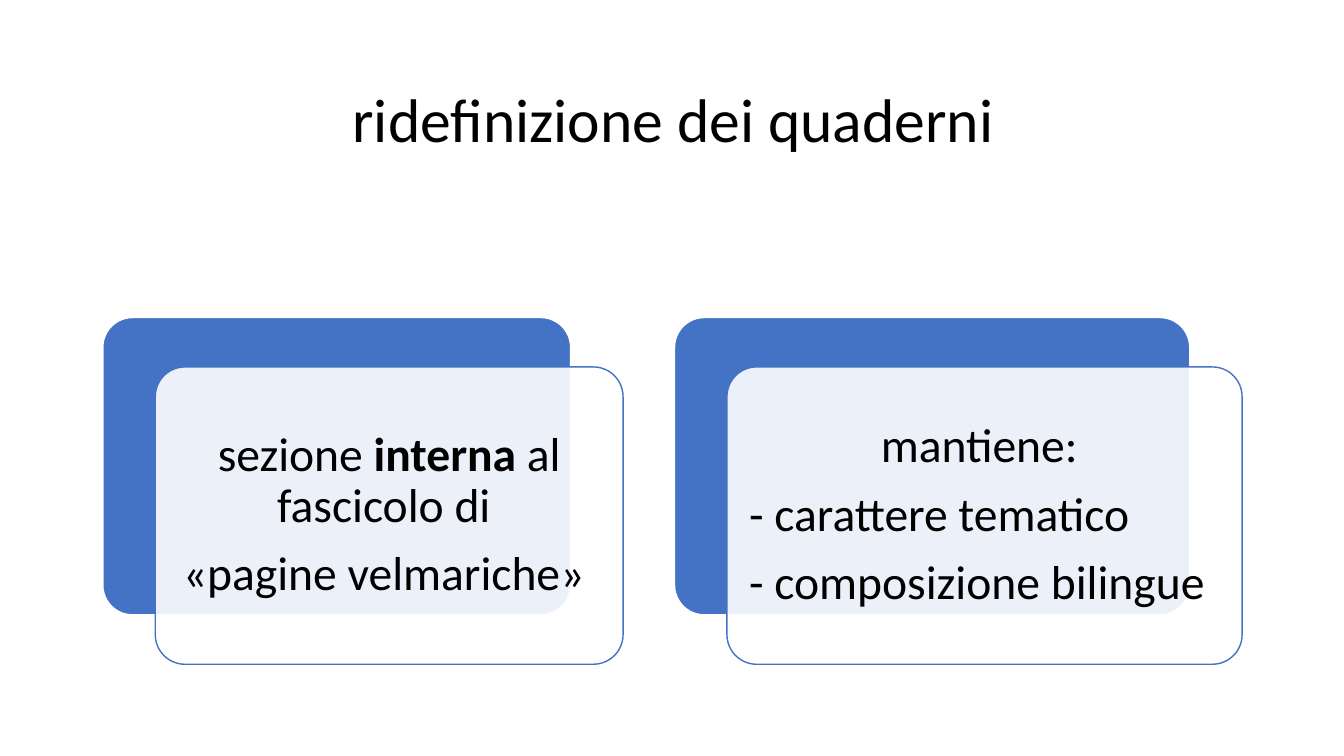
from dataclasses import dataclass

from lxml import etree
from pptx import Presentation
from pptx import util as u
from pptx.dml.color import RGBColor
from pptx.enum import shapes, text
from pptx.oxml.ns import qn
from pptx.slide import Slide
from pptx.text.text import TextFrame

COLORS = {"ink": "000000", "blue": "4472C4", "white": "FFFFFF"}
FONT = "Calibri"
CENTER, LEFT = text.PP_ALIGN.CENTER, text.PP_ALIGN.LEFT

CARD_TOP, CARD_HEIGHT = 3.15, 2.95
PANEL_SHIFT_X, PANEL_SHIFT_Y = 0.52, 0.49
TEXT_INSET, TEXT_MARGIN = 0.08, 0.14


@dataclass
class Run:
    words: str
    bold: bool = False


@dataclass
class Line:
    runs: list[Run]
    align: text.PP_ALIGN = CENTER


@dataclass
class Card:
    left: float
    width: float
    lines: list[Line]


TITLE = [Line([Run("ridefinizione dei quaderni")])]
CARDS = [
    Card(1.02, 4.64, [
        Line([Run("sezione "), Run("interna", bold=True), Run(" al fascicolo di ")]),
        Line([Run("«pagine velmariche» ")]),
    ]),
    Card(6.69, 5.11, [
        Line([Run("mantiene: ")]),
        Line([Run("- carattere tematico")], LEFT),
        Line([Run("- composizione bilingue")], LEFT),
    ]),
]


def rgb(name: str) -> RGBColor:
    return RGBColor.from_string(COLORS[name])


def write(frame: TextFrame, lines: list[Line], *, size: float,
          space_after: float = 0, color: str = "ink") -> None:
    frame.word_wrap = True
    frame.auto_size = text.MSO_AUTO_SIZE.NONE
    frame.vertical_anchor = text.MSO_ANCHOR.MIDDLE
    for index, line in enumerate(lines):
        paragraph = frame.add_paragraph() if index else frame.paragraphs[0]
        paragraph.alignment = line.align
        paragraph.line_spacing = 0.9
        paragraph.space_after = u.Pt(space_after)
        for part in line.runs:
            run = paragraph.add_run()
            run.text = part.words
            run.font.name = FONT
            run.font.size = u.Pt(size)
            run.font.bold = part.bold
            run.font.color.rgb = rgb(color)


def add_rounded(slide: Slide, left: float, top: float, width: float, *,
                fill: str, line: str, opacity: int = 100) -> None:
    box = slide.shapes.add_shape(
        shapes.MSO_SHAPE.ROUNDED_RECTANGLE, u.Inches(left), u.Inches(top),
        u.Inches(width), u.Inches(CARD_HEIGHT))
    box.adjustments[0] = 0.1
    box.shadow.inherit = False
    box.fill.solid()
    box.fill.fore_color.rgb = rgb(fill)
    box.line.color.rgb = rgb(line)
    box.line.width = u.Pt(1)
    if opacity < 100:
        fill_color = box.fill._xPr.find(qn("a:solidFill"))[0]
        etree.SubElement(fill_color, qn("a:alpha"), val=str(opacity * 1000))


def add_card(slide: Slide, card: Card) -> None:
    """Draw a blue backing, a translucent panel shifted over it, and its text."""
    panel_left, panel_top = card.left + PANEL_SHIFT_X, CARD_TOP + PANEL_SHIFT_Y
    add_rounded(slide, card.left, CARD_TOP, card.width, fill="blue", line="white")
    add_rounded(slide, panel_left, panel_top, card.width,
                fill="white", line="blue", opacity=90)
    caption = slide.shapes.add_textbox(
        u.Inches(panel_left + TEXT_INSET), u.Inches(panel_top + TEXT_INSET),
        u.Inches(card.width - 2 * TEXT_INSET),
        u.Inches(CARD_HEIGHT - 2 * TEXT_INSET)).text_frame
    caption.margin_left = caption.margin_right = u.Inches(TEXT_MARGIN)
    caption.margin_top = caption.margin_bottom = u.Inches(TEXT_MARGIN)
    write(caption, card.lines, size=34, space_after=12)


def main() -> None:
    deck = Presentation()
    deck.slide_width, deck.slide_height = u.Inches(13.33), u.Inches(7.5)
    slide = deck.slides.add_slide(deck.slide_layouts.get_by_name("Title Only"))
    title = slide.shapes.title
    title.left, title.top = u.Inches(1.67), u.Inches(0.6)
    title.width, title.height = u.Inches(10.02), u.Inches(1.24)
    write(title.text_frame, TITLE, size=44)
    for card in CARDS:
        add_card(slide, card)
    deck.save("out.pptx")


if __name__ == "__main__":
    main()
